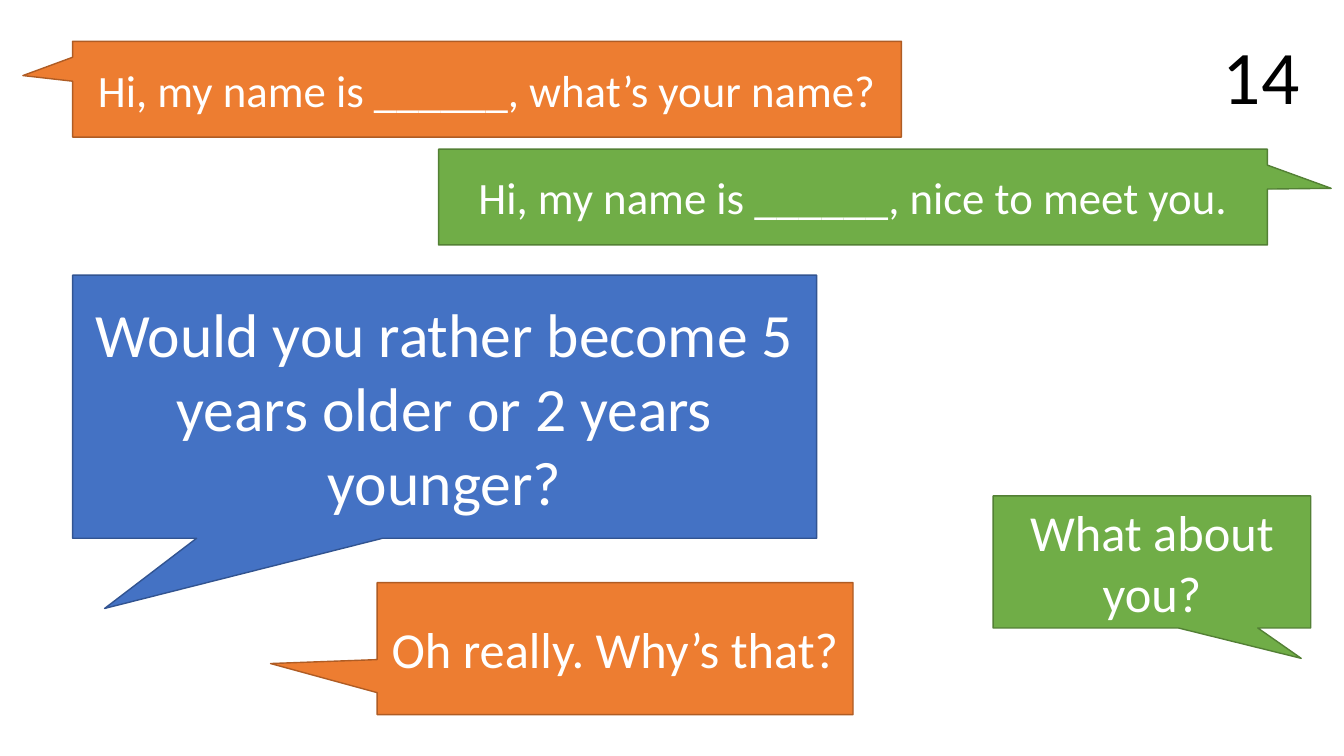
"""Build a conversation practice slide of coloured speech bubbles."""
from dataclasses import dataclass, field

from pptx import Presentation
from pptx.dml.color import RGBColor
from pptx.enum.shapes import MSO_SHAPE
from pptx.enum.text import MSO_ANCHOR, MSO_AUTO_SIZE, PP_ALIGN
from pptx.util import Inches, Pt

BUBBLES = [
    {"text": "Would you rather become 5 years older or 2 years younger?",
     "box": (0.72, 2.73, 7.38, 2.61), "tail": (-0.457, 0.767),
     "colour": "blue", "size": "question"},
    {"text": "Hi, my name is ______, what’s your name?",
     "box": (0.72, 0.41, 8.22, 0.95), "tail": (-0.56, -0.142),
     "colour": "orange", "size": "greeting"},
    {"text": "Hi, my name is ______, nice to meet you.",
     "box": (4.35, 1.48, 8.22, 0.95), "tail": (0.577, -0.091),
     "colour": "green", "size": "greeting"},
    {"text": "Oh really. Why’s that?",
     "box": (3.74, 5.78, 4.72, 1.31), "tail": (-0.724, 0.113),
     "colour": "orange", "size": "reply"},
    {"text": "What about you?",
     "box": (9.85, 4.92, 3.15, 1.31), "tail": (0.47, 0.73),
     "colour": "green", "size": "reply"},
]
CARD_NUMBER = {"text": "14", "box": (12.03, 0.24, 0.97, 1.01)}
SLIDE_SIZE = (13.33, 7.5)


@dataclass(frozen=True)
class Theme:
    font: str = "Calibri"
    light: str = "FFFFFF"
    dark: str = "000000"
    outline: float = 1
    colours: dict = field(default_factory=lambda: {
        "blue": ("4472C4", "325491"),
        "orange": ("ED7D31", "AF5C24"),
        "green": ("70AD47", "538035"),
    })
    sizes: dict = field(default_factory=lambda: {
        "question": 44, "greeting": 32, "reply": 36, "number": 54,
    })


THEME = Theme()


def write_text(shape, text, *, size, colour, align, anchor):
    frame = shape.text_frame
    frame.word_wrap = True
    frame.vertical_anchor = anchor
    paragraph = frame.paragraphs[0]
    paragraph.alignment = align
    run = paragraph.add_run()
    run.text = text
    run.font.name = THEME.font
    run.font.size = Pt(THEME.sizes[size])
    run.font.color.rgb = RGBColor.from_string(colour)


def add_bubble(slide, bubble):
    shape = slide.shapes.add_shape(
        MSO_SHAPE.RECTANGULAR_CALLOUT, *map(Inches, bubble["box"]))
    shape.shadow.inherit = False
    for index, offset in enumerate(bubble["tail"]):
        shape.adjustments[index] = offset
    fill, outline = THEME.colours[bubble["colour"]]
    shape.fill.solid()
    shape.fill.fore_color.rgb = RGBColor.from_string(fill)
    shape.line.color.rgb = RGBColor.from_string(outline)
    shape.line.width = Pt(THEME.outline)
    write_text(shape, bubble["text"], size=bubble["size"], colour=THEME.light,
               align=PP_ALIGN.CENTER, anchor=MSO_ANCHOR.MIDDLE)


def add_card_number(slide):
    box = slide.shapes.add_textbox(*map(Inches, CARD_NUMBER["box"]))
    write_text(box, CARD_NUMBER["text"], size="number", colour=THEME.dark,
               align=PP_ALIGN.LEFT, anchor=MSO_ANCHOR.TOP)
    box.text_frame.auto_size = MSO_AUTO_SIZE.SHAPE_TO_FIT_TEXT


def main():
    presentation = Presentation()
    presentation.slide_width, presentation.slide_height = map(Inches, SLIDE_SIZE)
    slide = presentation.slides.add_slide(presentation.slide_layouts[6])
    for bubble in BUBBLES:
        add_bubble(slide, bubble)
    add_card_number(slide)
    presentation.save("out.pptx")


if __name__ == "__main__":
    main()
